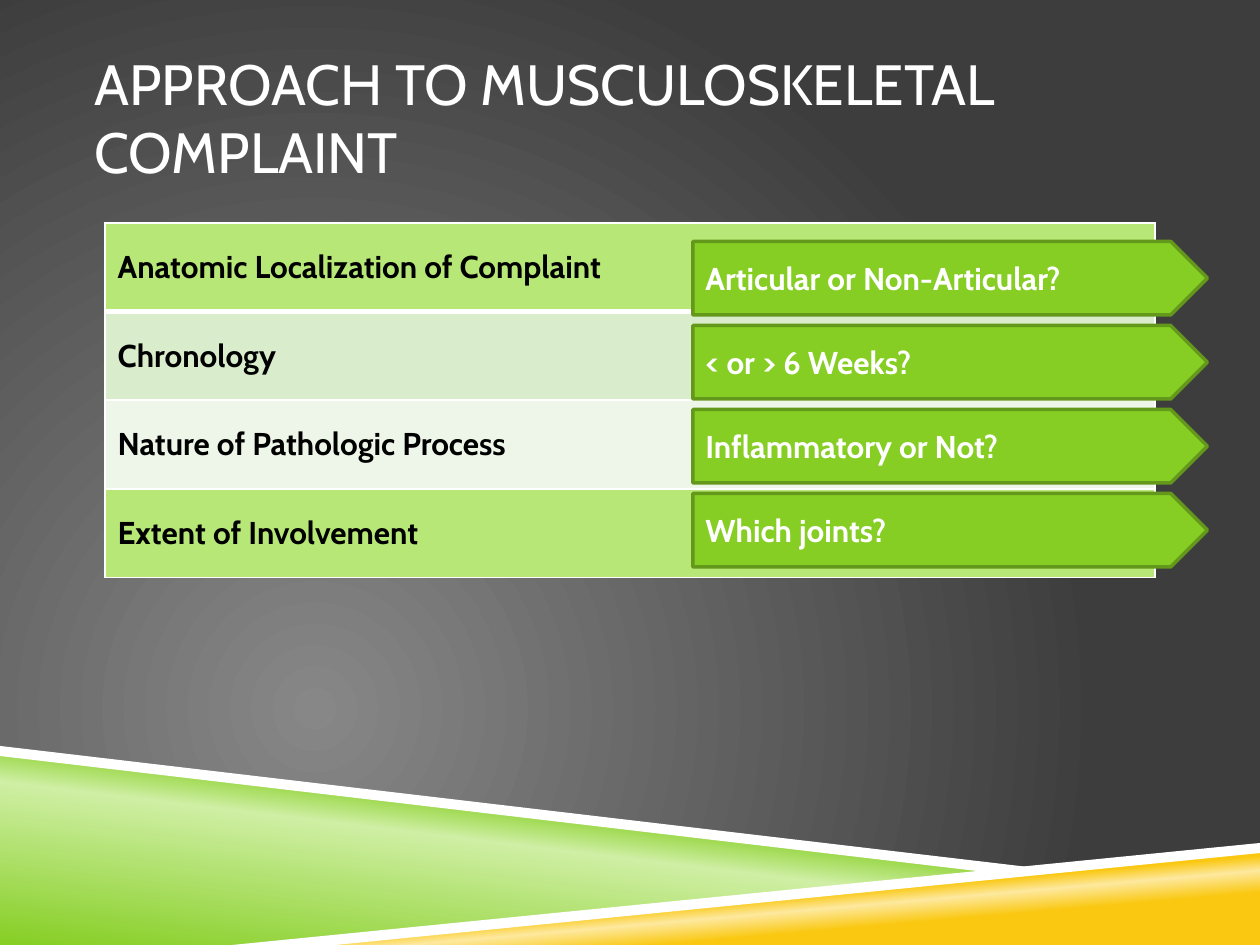
from lxml import etree
from pptx import Presentation
from pptx import util as u
from pptx.dml.color import RGBColor
from pptx.enum import shapes, text
from pptx.oxml.ns import qn

COLS, ROWS = 120, 90
WHITE, BLACK, GREEN, RIM = "FFFFFF", "000000", "86CE24", "63981B"
GOLD, LIME, PALE, MIST = "FAC810", "B7E776", "D9EDCD", "EDF6E8"


def hue(code):
    return RGBColor.from_string(code)


def node(root, tag, **attrs):
    return etree.SubElement(root, qn(tag), {k: str(v) for k, v in attrs.items()})


class Deck:
    font = "Cabin"

    def __init__(self):
        self.prs = Presentation()
        self.prs.slide_width = u.Inches(10)
        self.prs.slide_height = u.Inches(7.5)
        self.slide = self.prs.slides.add_slide(self.prs.slide_layouts[6])

    def x(self, col):
        return round(self.prs.slide_width * col / COLS)

    def y(self, row):
        return round(self.prs.slide_height * row / ROWS)

    def box(self, left, top, wide, high):
        return self.x(left), self.y(top), self.x(wide), self.y(high)

    def blend(self, root, stops, angle=None):
        grad = root.find(".//" + qn("a:gradFill"))
        for kid in list(grad):
            grad.remove(kid)
        group = node(grad, "a:gsLst")
        for pos, code in stops:
            stop = node(group, "a:gs", pos=pos * 1000)
            node(stop, "a:srgbClr", val=code)
        if angle is None:
            ring = node(grad, "a:path", path="circle")
            node(ring, "a:fillToRect", l=50000, t=100000, r=100000, b=50000)
        else:
            node(grad, "a:lin", ang=angle * 60000, scaled=0)

    def back(self, stops):
        self.slide.background.fill.gradient()
        self.blend(self.slide.element, stops)

    def band(self, points, fill, angle=0):
        spots = [(self.x(a), self.y(b)) for a, b in points]
        form = self.slide.shapes.build_freeform(*spots[0])
        form.add_line_segments(spots[1:], close=True)
        shape = form.convert_to_shape()
        shape.shadow.inherit = False
        shape.line.fill.background()
        if isinstance(fill, str):
            shape.fill.solid()
            shape.fill.fore_color.rgb = hue(fill)
        else:
            shape.fill.gradient()
            self.blend(shape.element, fill, angle)

    def label(self, frame, words, size, code, bold=False):
        run = frame.paragraphs[0].add_run()
        run.text = words
        run.font.name = self.font
        run.font.size = u.Pt(size)
        run.font.bold = bold
        run.font.color.rgb = hue(code)

    def title(self, words, *spot):
        frame = self.slide.shapes.add_textbox(*self.box(*spot)).text_frame
        frame.word_wrap = True
        frame.margin_left = frame.margin_right = 0
        frame.vertical_anchor = text.MSO_ANCHOR.MIDDLE
        self.label(frame, words, 32.4, WHITE)

    def edge(self, cell, side, width):
        line = node(cell._tc.get_or_add_tcPr(), "a:ln" + side, w=u.Pt(width))
        node(node(line, "a:solidFill"), "a:srgbClr", val=WHITE)

    def table(self, items, *spot):
        grid = self.slide.shapes.add_table(len(items), 1, *self.box(*spot)).table
        grid.first_row = grid.horz_banding = False
        for i, (words, fill) in enumerate(items):
            cell = grid.cell(i, 0)
            cell.vertical_anchor = text.MSO_ANCHOR.MIDDLE
            for side in "LRTB":
                heavy = (i, side) in ((0, "B"), (1, "T"))
                self.edge(cell, side, 3 if heavy else 1)
            cell.fill.solid()
            cell.fill.fore_color.rgb = hue(fill)
            self.label(cell.text_frame, words, 18, BLACK, True)

    def arrow(self, words, left, top, wide, high):
        group = self.slide.shapes.add_group_shape().shapes
        shape = group.add_shape(shapes.MSO_SHAPE.PENTAGON, *self.box(left, top, wide, high))
        shape.shadow.inherit = False
        shape.fill.solid()
        shape.fill.fore_color.rgb = hue(GREEN)
        shape.line.color.rgb = hue(RIM)
        shape.line.width = u.Pt(2)
        frame = group.add_textbox(*self.box(left, top + 1.1, wide - 3, 4.8)).text_frame
        frame.word_wrap = True
        frame.auto_size = text.MSO_AUTO_SIZE.SHAPE_TO_FIT_TEXT
        self.label(frame, words, 18, WHITE, True)


def main():
    deck = Deck()
    deck.back([(0, "878787"), (100, "3D3D3D")])
    deck.band([(0, 71.64), (95.04, 83.04), (24, 90), (0, 90)],
              [(0, GREEN), (52, "CFEFA4"), (66, GREEN)], 277)
    deck.band([(23.76, 90), (120, 80.64), (120, 90)],
              [(28, GOLD), (40, "FDE99F"), (48, GOLD)], 265)
    deck.band([(0, 71.04), (0, 72), (94.8, 83.16), (99.84, 82.8)], WHITE)
    deck.band([(120, 80.28), (22.08, 90), (31.92, 90), (120, 81.24)], WHITE)
    deck.title("APPROACH TO MUSCULOSKELETAL COMPLAINT", 9, 3.6, 102, 15)
    deck.table([
        ("Anatomic Localization of Complaint", LIME),
        ("Chronology", PALE),
        ("Nature of Pathologic Process", MIST),
        ("Extent of Involvement", LIME),
    ], 10, 21.25, 100, 33.75)
    asks = ["Articular or Non-Articular?", "< or > 6 Weeks?",
            "Inflammatory or Not?", "Which joints?"]
    for i, ask in enumerate(asks):
        deck.arrow(ask, 66, 23 + 8 * i, 49, 7)
    deck.prs.save("out.pptx")


if __name__ == "__main__":
    main()
